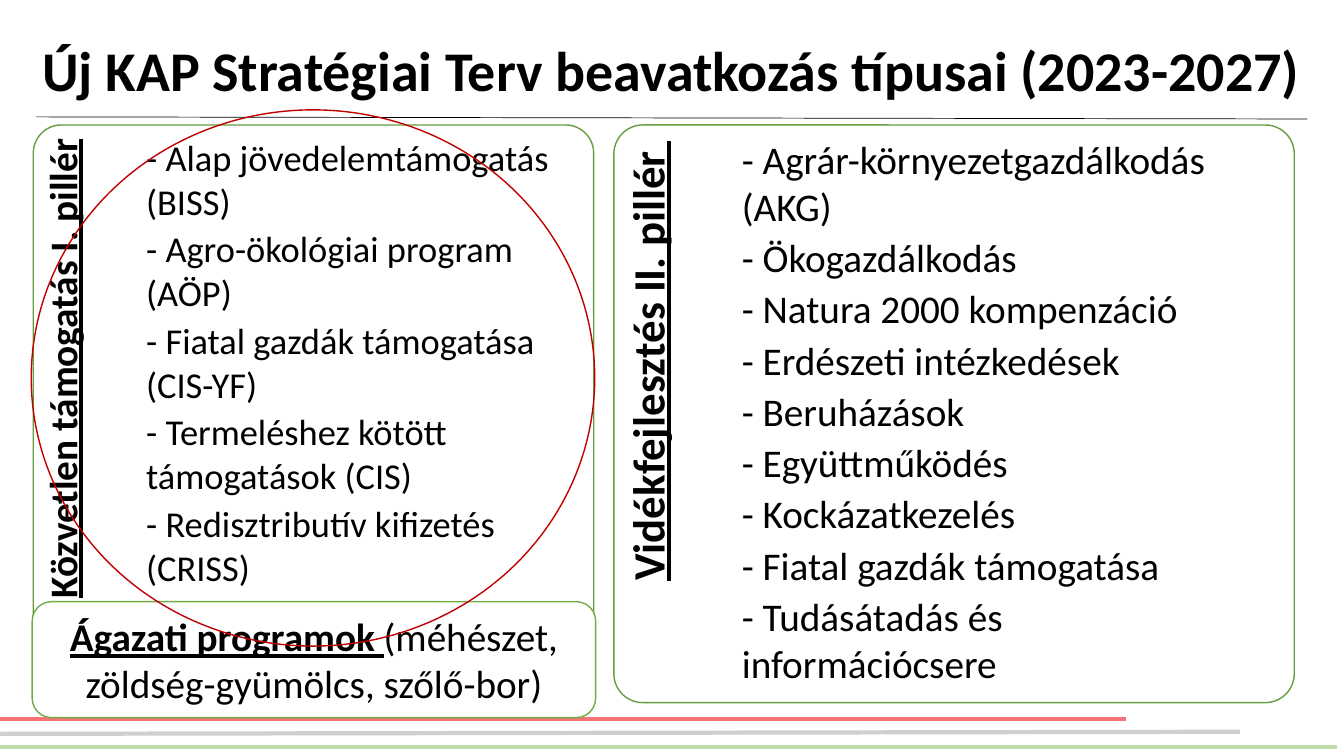
from lxml import etree
from pptx import Presentation
from pptx.dml.color import RGBColor
from pptx.enum.shapes import MSO_CONNECTOR, MSO_SHAPE
from pptx.enum.text import MSO_ANCHOR, PP_ALIGN
from pptx.oxml.ns import qn
from pptx.util import Pt

STRAIGHT = MSO_CONNECTOR.STRAIGHT
ROUNDED, OVAL = MSO_SHAPE.ROUNDED_RECTANGLE, MSO_SHAPE.OVAL
TOP, MIDDLE = MSO_ANCHOR.TOP, MSO_ANCHOR.MIDDLE
LEFT, CENTER, RIGHT = PP_ALIGN.LEFT, PP_ALIGN.CENTER, PP_ALIGN.RIGHT

BLACK = RGBColor(0x00, 0x00, 0x00)
WHITE = RGBColor(0xFF, 0xFF, 0xFF)
CORAL = RGBColor(0xF9, 0x73, 0x76)
PALE_GREEN = RGBColor(0xBE, 0xDC, 0xAA)
GREY = RGBColor(0xD0, 0xCE, 0xCE)
PANEL_GREEN = RGBColor(0x66, 0x9D, 0x40)
BOX_GREEN = RGBColor(0x70, 0xAD, 0x47)
RED = RGBColor(0xC0, 0x00, 0x00)

FONT = "Calibri"
PANEL_TOP, PANEL_HEIGHT = 89.3, 412.6
LABEL_LENGTH = 338.4

DIRECT_SUPPORT = [
    "- Alap jövedelemtámogatás (BISS)",
    "- Agro-ökológiai program (AÖP)",
    "- Fiatal gazdák támogatása (CIS-YF)",
    "- Termeléshez kötött támogatások (CIS)",
    "- Redisztributív kifizetés (CRISS)",
]
RURAL_DEVELOPMENT = [
    "- Agrár-környezetgazdálkodás (AKG)",
    "- Ökogazdálkodás",
    "- Natura 2000 kompenzáció",
    "- Erdészeti intézkedések",
    "- Beruházások",
    "- Együttműködés",
    "- Kockázatkezelés",
    "- Fiatal gazdák támogatása",
    "- Tudásátadás és információcsere",
]


def add_line(slide, start, end, color, width):
    line = slide.shapes.add_connector(STRAIGHT, *map(Pt, start + end))
    line.line.color.rgb = color
    line.line.width = Pt(width)
    etree.SubElement(line._element.spPr, qn("a:effectLst"))


def add_outline(slide, kind, box, color, fill=None):
    shape = slide.shapes.add_shape(kind, *map(Pt, box))
    shape.shadow.inherit = False
    shape.line.color.rgb = color
    shape.line.width = Pt(1)
    if fill is None:
        shape.fill.background()
    else:
        shape.fill.solid()
        shape.fill.fore_color.rgb = fill
    return shape


def set_frame(frame, margins, anchor=TOP):
    frame.word_wrap = True
    frame.vertical_anchor = anchor
    (frame.margin_left, frame.margin_top,
     frame.margin_right, frame.margin_bottom) = map(Pt, margins)


def add_run(paragraph, text, size, bold=False, underline=False):
    run = paragraph.add_run()
    run.text = text
    run.font.name = FONT
    run.font.size = Pt(size)
    run.font.bold = bold
    run.font.underline = underline
    run.font.color.rgb = BLACK


def add_label(slide, left, thickness, text, size, margins):
    # Rotated about its centre, so the box is placed by that centre
    box = slide.shapes.add_textbox(
        Pt(left + (thickness - LABEL_LENGTH) / 2),
        Pt(PANEL_TOP + (LABEL_LENGTH - thickness) / 2),
        Pt(LABEL_LENGTH), Pt(thickness))
    box.rotation = 270
    set_frame(box.text_frame, margins)
    paragraph = box.text_frame.paragraphs[0]
    paragraph.alignment = RIGHT
    paragraph.line_spacing = 0.9
    add_run(paragraph, text, size, bold=True, underline=True)


def add_list(slide, left, width, items, size):
    box = slide.shapes.add_textbox(
        Pt(left), Pt(PANEL_TOP), Pt(width), Pt(PANEL_HEIGHT))
    frame = box.text_frame
    set_frame(frame, (0, 7.2, 0, 0))
    for index, item in enumerate(items):
        paragraph = frame.add_paragraph() if index else frame.paragraphs[0]
        paragraph.space_after = Pt(3)
        add_run(paragraph, item, size)


def add_panel(slide, left, width):
    panel = add_outline(slide, ROUNDED, (left, PANEL_TOP, width, PANEL_HEIGHT),
                        PANEL_GREEN, WHITE)
    panel.adjustments[0] = 0.05


def add_title(slide, text):
    title = slide.shapes.title
    title.left, title.top, title.width, title.height = map(
        Pt, (23, 0, 918.7, 105.1))
    set_frame(title.text_frame, (7.2, 3.6, 7.2, 3.6), MIDDLE)
    paragraph = title.text_frame.paragraphs[0]
    paragraph.alignment = LEFT
    paragraph.line_spacing = 0.9
    add_run(paragraph, text, 40, bold=True)


def add_sector_box(slide):
    box = add_outline(slide, ROUNDED, (23, 429.8, 402.5, 82.8),
                      BOX_GREEN, WHITE)
    set_frame(box.text_frame, (7.2, 3.6, 7.2, 3.6), MIDDLE)
    paragraph = box.text_frame.paragraphs[0]
    paragraph.alignment = CENTER
    add_run(paragraph, "Ágazati programok ", 28, bold=True, underline=True)
    add_run(paragraph, "(méhészet, zöldség-gyümölcs, szőlő-bor)", 28)


def main():
    presentation = Presentation()
    presentation.slide_width, presentation.slide_height = Pt(960), Pt(540)
    slide = presentation.slides.add_slide(presentation.slide_layouts[5])

    # Footer stripes and title rule
    add_line(slide, (0, 513.4), (804.2, 513.4), CORAL, 3)
    add_line(slide, (0, 533.5), (954.7, 533.5), PALE_GREEN, 3)
    add_line(slide, (0, 524.2), (885.6, 522.7), GREY, 3)
    add_line(slide, (25.9, 83.5), (933.8, 85), BLACK, 0.5)

    add_title(slide, "Új KAP Stratégiai Terv beavatkozás típusai (2023-2027)")

    # First pillar
    add_panel(slide, 23.8, 400.3)
    add_label(slide, 23.8, 79.9, "Közvetlen támogatás I. pillér", 28,
              (0, 7.2, 10, 0))
    add_list(slide, 104.4, 298.8, DIRECT_SUPPORT, 26)

    # Second pillar
    add_panel(slide, 438.5, 486)
    add_label(slide, 438.5, 97.2, "Vidékfejlesztés II. pillér ", 32,
              (0, 8.6, 11.5, 0))
    add_list(slide, 529.9, 362.2, RURAL_DEVELOPMENT, 28)

    # Sector programmes and highlight ring
    add_sector_box(slide)
    add_outline(slide, OVAL, (22.3, 78.5, 402.5, 383), RED)

    presentation.save("out.pptx")


if __name__ == "__main__":
    main()
